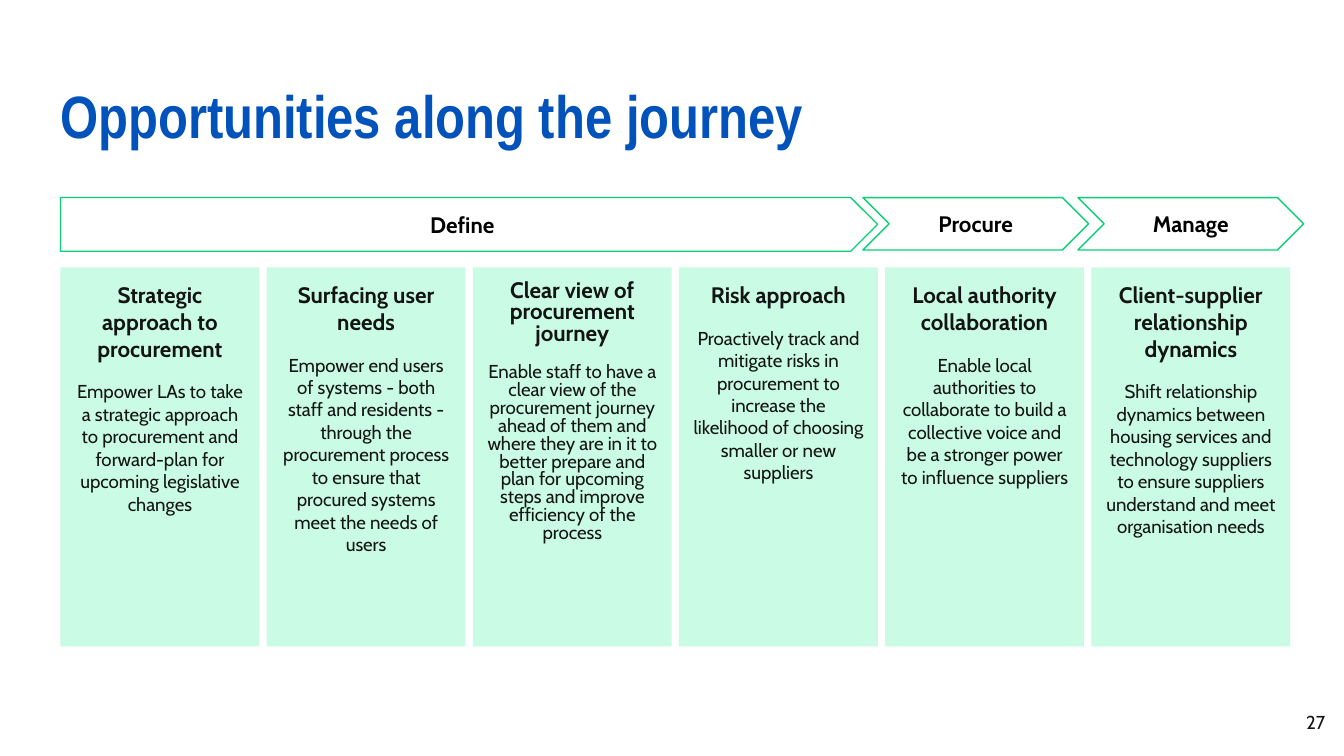
from pptx import Presentation
from pptx.dml.color import RGBColor
from pptx.enum import shapes, text
from pptx.util import Inches, Pt

BLUE = RGBColor(0x02, 0x52, 0xBB)
GREEN = RGBColor(0x0B, 0xCF, 0x75)
MINT = RGBColor(0xCA, 0xFC, 0xE5)
INK = RGBColor(0x14, 0x14, 0x14)
BLACK = RGBColor(0, 0, 0)
SHAPE = shapes.MSO_SHAPE
ALIGN = text.PP_ALIGN
ANCHOR = text.MSO_ANCHOR

# Stage: name, shape, left within the band, width, height
STAGES = [
    ("Define", SHAPE.PENTAGON, 0, 6.08, 0.4),
    ("Procure", SHAPE.CHEVRON, 5.97, 1.68, 0.39),
    ("Manage", SHAPE.CHEVRON, 7.57, 1.68, 0.39),
]

# Opportunity: heading, description, line spacing
OPPORTUNITIES = [
    ("Strategic approach to procurement",
     "Empower LAs to take a strategic approach to procurement and "
     "forward-plan for upcoming legislative changes", 1.0),
    ("Surfacing user needs",
     "Empower end users of systems - both staff and residents - through the "
     "procurement process to ensure that procured systems meet the needs of users", 1.0),
    ("Clear view of procurement journey",
     "Enable staff to have a clear view of the procurement journey ahead of them "
     "and where they are in it to better prepare and plan for upcoming steps and "
     "improve efficiency of the process", 0.8),
    ("Risk approach",
     "Proactively track and mitigate risks in procurement to increase the "
     "likelihood of choosing smaller or new suppliers", 1.0),
    ("Local authority collaboration",
     "Enable local authorities to collaborate to build a collective voice and "
     "be a stronger power to influence suppliers", 1.0),
    ("Client-supplier relationship dynamics",
     "Shift relationship dynamics between housing services and technology "
     "suppliers to ensure suppliers understand and meet organisation needs", 1.0),
]


def set_frame(tf, side=0.1, anchor=ANCHOR.TOP):
    tf.word_wrap = True
    tf.auto_size = text.MSO_AUTO_SIZE.NONE
    tf.vertical_anchor = anchor
    tf.margin_left = tf.margin_right = Inches(side)
    tf.margin_top = tf.margin_bottom = Inches(0.1)


def write(tf, words, size=12, font="Cabin", color=INK, bold=False,
          align=ALIGN.CENTER, before=0, spacing=1.0):
    p = tf.paragraphs[0] if not tf.text else tf.add_paragraph()
    p.alignment = align
    p.space_before = Pt(before)
    p.line_spacing = spacing
    r = p.add_run()
    r.text = words
    r.font.size = Pt(size)
    r.font.name = font
    r.font.bold = bold
    r.font.color.rgb = color


def add_text(s, box, words, side=0.1, **fmt):
    tf = s.shapes.add_textbox(*map(Inches, box)).text_frame
    set_frame(tf, side)
    write(tf, words, **fmt)


def add_box(s, kind, box, fill=None, line=None):
    sp = s.shapes.add_shape(kind, *map(Inches, box))
    sp.shadow.inherit = False
    if fill is None:
        sp.fill.background()
    else:
        sp.fill.solid()
        sp.fill.fore_color.rgb = fill
    if line is None:
        sp.line.fill.background()
    else:
        sp.line.color.rgb = line
        sp.line.width = Pt(0.75)
    return sp


def add_stages(s, left, top):
    for name, kind, dx, width, height in STAGES:
        sp = add_box(s, kind, (left + dx, top, width, height), line=GREEN)
        sp.adjustments[0] = 0.5
        set_frame(sp.text_frame, anchor=ANCHOR.MIDDLE)
        write(sp.text_frame, name, color=BLACK, bold=True)


def add_opportunities(s, left, top, width, height, card_width=1.48):
    pitch = (width - card_width) / (len(OPPORTUNITIES) - 1)
    for i, (heading, description, spacing) in enumerate(OPPORTUNITIES):
        sp = add_box(s, SHAPE.RECTANGLE,
                     (left + i * pitch, top, card_width, height), fill=MINT)
        set_frame(sp.text_frame)
        write(sp.text_frame, heading, bold=True, spacing=spacing)
        write(sp.text_frame, description, size=10, before=10, spacing=spacing)


def main():
    prs = Presentation()
    # Widescreen, 16:9
    prs.slide_width = Inches(10)
    prs.slide_height = prs.slide_width * 9 // 16
    s = prs.slides.add_slide(prs.slide_layouts[6])

    # Page number and title
    add_text(s, (9.36, 5.19, 0.6, 0.43), "27", size=10, align=ALIGN.RIGHT)
    add_text(s, (0.45, 0.49, 7.76, 0.66), "Opportunities along the journey",
             side=0, size=32, font="Arial Narrow", color=BLUE, bold=True,
             align=ALIGN.LEFT)

    # Opportunity cards under the journey stages
    add_opportunities(s, 0.45, 1.99, 9.15, 2.82)
    add_stages(s, 0.45, 1.47)

    prs.save("out.pptx")


if __name__ == "__main__":
    main()
